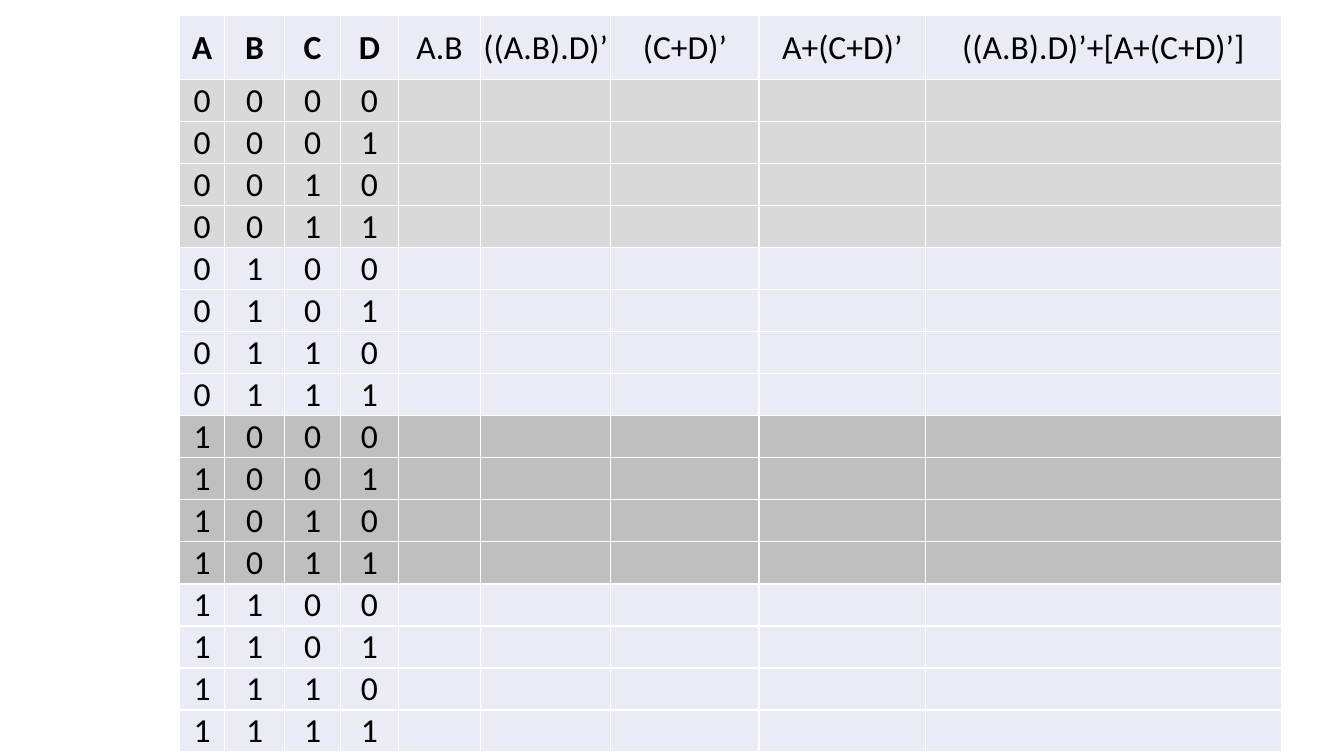
from itertools import product

from lxml.etree import SubElement
from pptx import Presentation
from pptx.dml.color import RGBColor
from pptx.enum.text import MSO_ANCHOR, PP_ALIGN
from pptx.oxml.ns import qn
from pptx.util import Inches, Pt

BLACK = RGBColor(0x00, 0x00, 0x00)
WHITE = RGBColor(0xFF, 0xFF, 0xFF)
PALE_BLUE = RGBColor(0xE9, 0xEB, 0xF5)
LIGHT_GREY = RGBColor(0xD9, 0xD9, 0xD9)
MID_GREY = RGBColor(0xBF, 0xBF, 0xBF)

VARIABLES = ["A", "B", "C", "D"]
EXPRESSIONS = ["A.B", "((A.B).D)’", "(C+D)’", "A+(C+D)’", "((A.B).D)’+[A+(C+D)’]"]
COLUMN_WIDTHS = [0.45, 0.59, 0.56, 0.57, 0.82, 1.29, 1.47, 1.65, 3.53]
HEADER_HEIGHT = 0.64
ROW_HEIGHT = 0.39
GROUP_FILLS = [LIGHT_GREY, PALE_BLUE, MID_GREY, PALE_BLUE]
GROUP_SIZE = 4


def write_text(cell, text, bold=False, anchor=MSO_ANCHOR.BOTTOM):
    cell.vertical_anchor = anchor
    paragraph = cell.text_frame.paragraphs[0]
    paragraph.alignment = PP_ALIGN.CENTER
    run = paragraph.add_run()
    run.text = text
    run.font.name = "Calibri"
    run.font.size = Pt(24)
    run.font.bold = bold
    run.font.color.rgb = BLACK


def style_cell(cell, fill):
    cell.margin_left = cell.margin_right = cell.margin_top = Inches(0.01)
    cell.margin_bottom = 0
    properties = cell._tc.get_or_add_tcPr()
    for side in ("a:lnL", "a:lnR", "a:lnT", "a:lnB"):
        border = SubElement(properties, qn(side), w=str(Pt(1)))
        border_fill = SubElement(border, qn("a:solidFill"))
        SubElement(border_fill, qn("a:srgbClr"), val=str(WHITE))
    cell.fill.solid()
    cell.fill.fore_color.rgb = fill


presentation = Presentation()
presentation.slide_width = Inches(13.33)
presentation.slide_height = Inches(7.5)
slide = presentation.slides.add_slide(presentation.slide_layouts[6])

headers = VARIABLES + EXPRESSIONS
input_rows = list(product("01", repeat=len(VARIABLES)))
table_height = HEADER_HEIGHT + ROW_HEIGHT * len(input_rows)
table = slide.shapes.add_table(
    len(input_rows) + 1, len(headers),
    Inches(1.78), Inches(0.15), Inches(sum(COLUMN_WIDTHS)), Inches(table_height),
).table
table.first_row = False
table.horz_banding = False

for column, width in zip(table.columns, COLUMN_WIDTHS):
    column.width = Inches(width)
for row in table.rows:
    row.height = Inches(ROW_HEIGHT)
table.rows[0].height = Inches(HEADER_HEIGHT)

for column_index, header in enumerate(headers):
    cell = table.cell(0, column_index)
    style_cell(cell, PALE_BLUE)
    write_text(cell, header, bold=header in VARIABLES, anchor=MSO_ANCHOR.MIDDLE)

for row_index, values in enumerate(input_rows):
    for column_index in range(len(headers)):
        cell = table.cell(row_index + 1, column_index)
        style_cell(cell, GROUP_FILLS[row_index // GROUP_SIZE])
        if column_index < len(values):
            write_text(cell, values[column_index])

presentation.save("out.pptx")
